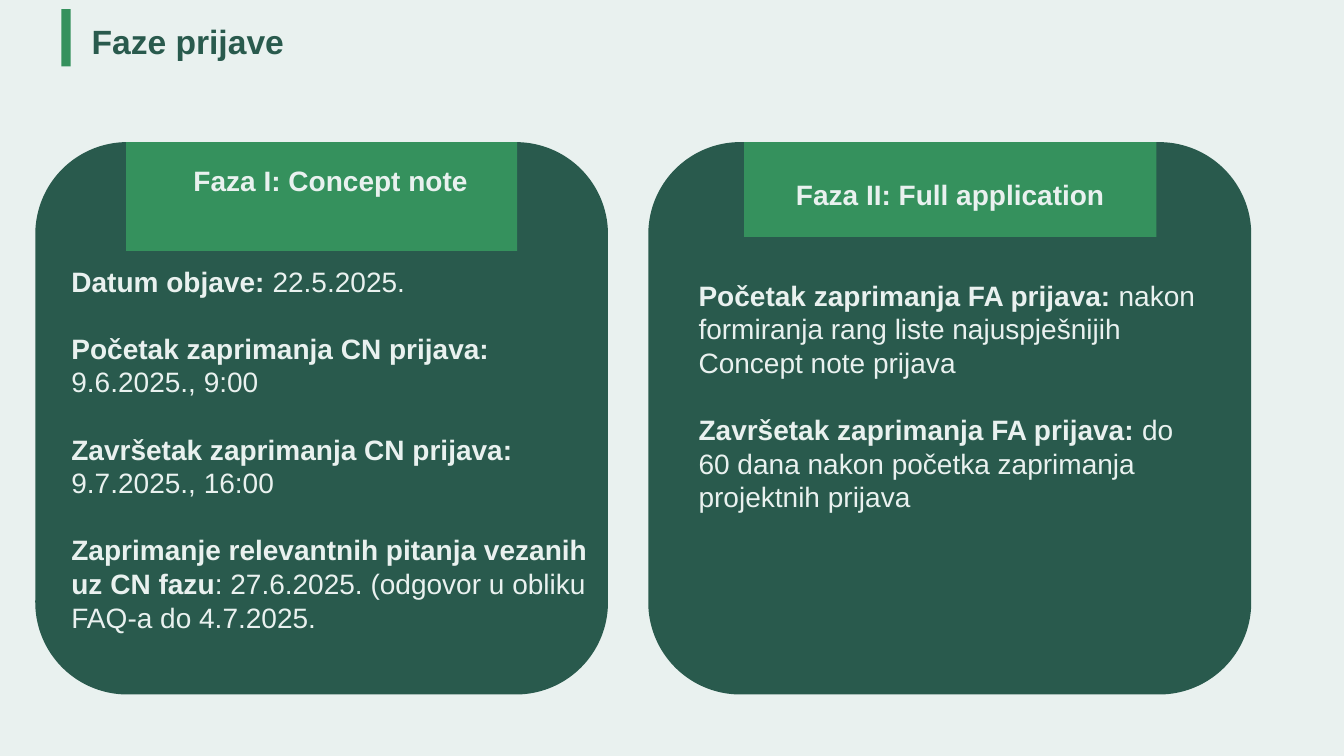
from dataclasses import dataclass
from typing import Any

from pptx import Presentation
from pptx.dml.color import RGBColor
from pptx.enum import shapes, text
from pptx.util import Inches, Pt

Box = tuple[float, float, float, float]
Run = tuple[str, bool]


@dataclass(frozen=True)
class Theme:
    """Colours, font and type sizes of the slide."""
    pale: RGBColor = RGBColor.from_string("E9F1EF")
    dark: RGBColor = RGBColor.from_string("295A4D")
    green: RGBColor = RGBColor.from_string("35915D")
    font: str = "Arial"
    title: int = 24
    body: int = 20
    line: int = 24


@dataclass(frozen=True)
class Phase:
    """One phase card with its banner, heading and facts."""
    card: Box
    banner: Box
    area: Box
    head: str
    facts: list[tuple[str, str]]


THEME = Theme()
PHASES = [
    Phase((0.35, 1.41, 5.68, 5.48), (1.25, 1.41, 3.88, 1.08),
          (0.61, 1.57, 5.34, 5.15), "Faza I: Concept note", [
        ("Datum objave: ", "22.5.2025."),
        ("Početak zaprimanja CN prijava: ", "9.6.2025., 9:00"),
        ("Završetak zaprimanja CN prijava: ", "9.7.2025., 16:00"),
        ("Zaprimanje relevantnih pitanja vezanih uz CN fazu",
         ": 27.6.2025. (odgovor u obliku FAQ-a do 4.7.2025."),
    ]),
    Phase((6.43, 1.41, 5.98, 5.48), (7.38, 1.41, 4.09, 0.94),
          (6.83, 1.71, 5.19, 3.8), "Faza II: Full application", [
        ("Početak zaprimanja FA prijava: ",
         "nakon formiranja rang liste najuspješnijih Concept note prijava"),
        ("Završetak zaprimanja FA prijava: ",
         "do 60 dana nakon početka zaprimanja projektnih prijava"),
    ]),
]


def block(tree: Any, kind: shapes.MSO_SHAPE, box: Box, fill: RGBColor) -> None:
    """Draw a plain filled shape."""
    shape = tree.add_shape(kind, *map(Inches, box))
    shape.shadow.inherit = False
    shape.fill.solid()
    shape.fill.fore_color.rgb = fill
    shape.line.fill.background()


def frame(tree: Any, box: Box, anchor: text.MSO_ANCHOR) -> Any:
    """Add a wrapping text box and return its text frame."""
    area = tree.add_textbox(*map(Inches, box)).text_frame
    area.word_wrap = True
    area.vertical_anchor = anchor
    return area


def write(para: Any, runs: list[Run], *, size: int, color: RGBColor,
          line: Any, before: int = 0,
          align: text.PP_ALIGN = text.PP_ALIGN.LEFT) -> None:
    """Fill a paragraph with bold and regular runs."""
    para.alignment = align
    para.line_spacing = line
    para.space_before = Pt(before)
    for words, bold in runs:
        run = para.add_run()
        run.text = words
        run.font.name = THEME.font
        run.font.size = Pt(size)
        run.font.bold = bold
        run.font.color.rgb = color


def draw(tree: Any, phase: Phase) -> None:
    """Draw a phase card as one group."""
    group = tree.add_group_shape().shapes
    block(group, shapes.MSO_SHAPE.ROUNDED_RECTANGLE, phase.card, THEME.dark)
    block(group, shapes.MSO_SHAPE.RECTANGLE, phase.banner, THEME.green)
    area = frame(tree, phase.area, text.MSO_ANCHOR.TOP)
    style = dict(size=THEME.body, color=THEME.pale, line=Pt(THEME.line))
    write(area.paragraphs[0], [(phase.head, True)],
          align=text.PP_ALIGN.CENTER, **style)
    for index, (label, value) in enumerate(phase.facts):
        write(area.add_paragraph(), [(label, True), (value, False)],
              before=THEME.line * (1 if index else 2), **style)


def main() -> None:
    """Build and save the slide."""
    deck = Presentation()
    deck.slide_width, deck.slide_height = Inches(13.33), Inches(7.5)
    slide = deck.slides.add_slide(deck.slide_layouts[6])
    slide.background.fill.solid()
    slide.background.fill.fore_color.rgb = THEME.pale
    for phase in PHASES:
        draw(slide.shapes, phase)
    title = frame(slide.shapes, (0.81, 0.2, 10.71, 0.47), text.MSO_ANCHOR.MIDDLE)
    write(title.paragraphs[0], [("Faze prijave", True)],
          size=THEME.title, color=THEME.dark, line=0.9)
    block(slide.shapes, shapes.MSO_SHAPE.RECTANGLE,
          (0.61, 0.09, 0.09, 0.57), THEME.green)
    deck.save("out.pptx")


if __name__ == "__main__":
    main()
